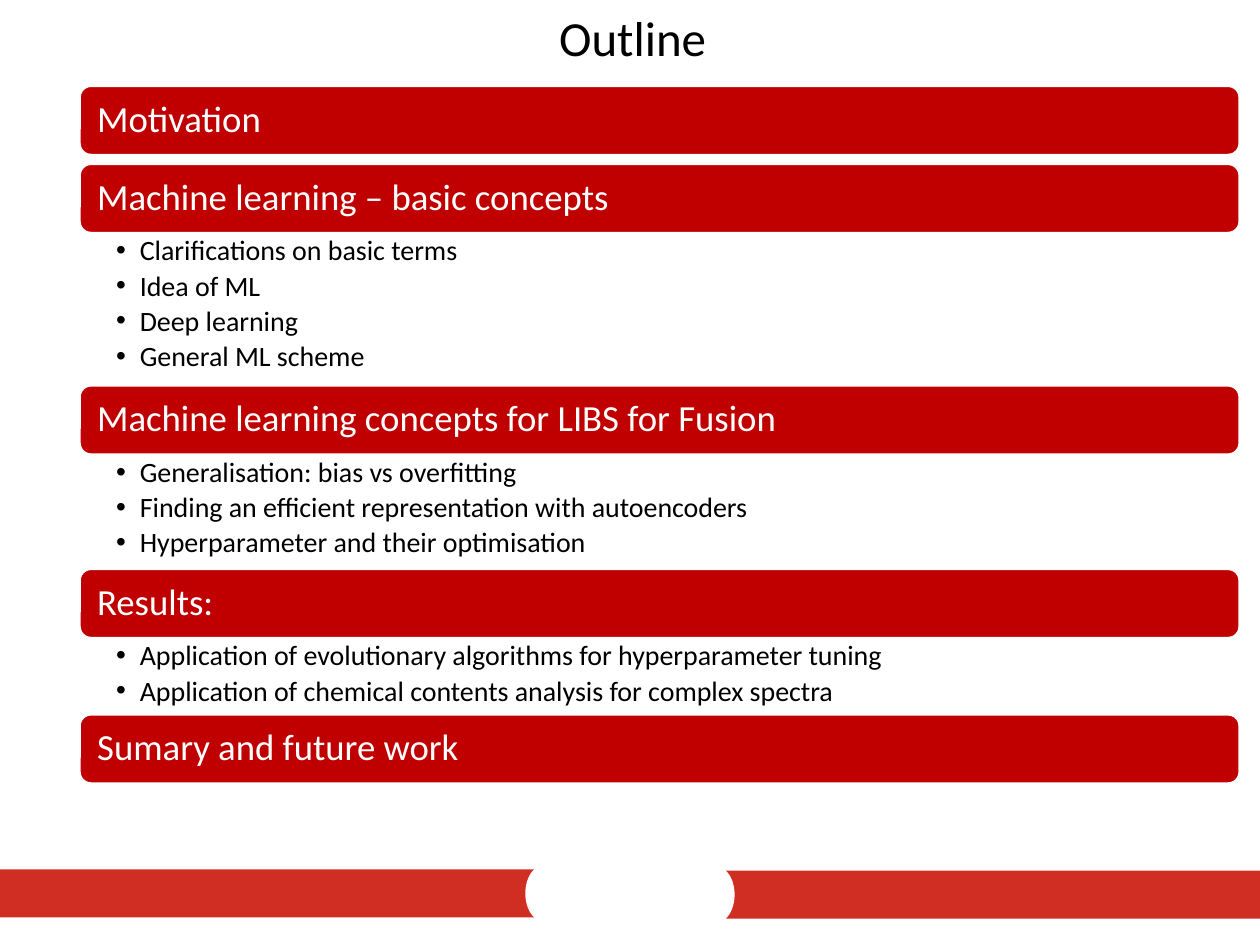
from lxml import etree
from pptx import Presentation
from pptx import util as u
from pptx.dml.color import RGBColor
from pptx.enum import shapes, text
from pptx.oxml.ns import qn

Pt = u.Pt
TITLE = "Outline"
PARTS = [
    ("Motivation", []),
    ("Machine learning – basic concepts", [
        "Clarifications on basic terms",
        "Idea of ML",
        "Deep learning",
        "General ML scheme",
    ]),
    ("Machine learning concepts for LIBS for Fusion", [
        "Generalisation: bias vs overfitting",
        "Finding an efficient representation with autoencoders",
        "Hyperparameter and their optimisation",
    ]),
    ("Results:", [
        "Application of evolutionary algorithms for hyperparameter tuning",
        "Application of chemical contents analysis for complex spectra",
    ]),
    ("Sumary and future work", []),
]


class Theme:
    font = "Calibri"
    black, white = RGBColor(0, 0, 0), RGBColor(255, 255, 255)
    bar, band = RGBColor(0xC0, 0, 0), RGBColor(0xD0, 0x2E, 0x23)
    title, head, item = Pt(28), Pt(21), Pt(16)


WIDE, HIGH = 720, 540
LEFT, TOP, SPAN = 45.4, 49, 663
BAR, ROW, GAP = 39.6, 21.75, 5
MID, ANY = text.MSO_ANCHOR.MIDDLE, text.MSO_ANCHOR.TOP
BAND_W, BAND_H, CAP_W, CAP_H = 305.3, 27.4, 21.6, 32.4


def put(item, vals):
    for key, val in vals.items():
        setattr(item, key, val)


def box(kind, area, fill, line=None):
    shape = page.shapes.add_shape(kind, *map(Pt, area))
    shape.shadow.inherit = False
    shape.fill.solid()
    shape.fill.fore_color.rgb = fill
    if line is None:
        shape.line.fill.background()
    else:
        shape.line.color.rgb = line
        shape.line.width = Pt(1.5)
    return shape


def frame(shape, pads, anchor):
    tf = shape.text_frame
    names = ("margin_left", "margin_top", "margin_right", "margin_bottom")
    put(tf, dict(zip(names, map(Pt, pads)), word_wrap=True, vertical_anchor=anchor))
    return tf


def write(para, words, size, color, align=text.PP_ALIGN.LEFT, after=0):
    put(para, {"alignment": align, "line_spacing": 0.9, "space_after": Pt(after)})
    run = para.add_run()
    run.text = words
    put(run.font, {"name": Theme.font, "size": size})
    run.font.color.rgb = color


def bullet(para):
    para.level = 1
    props = para._p.get_or_add_pPr()
    props.set("marL", str(Pt(13.5)))
    props.set("indent", str(-Pt(13.5)))
    etree.SubElement(props, qn("a:buFont")).set("typeface", "Arial")
    etree.SubElement(props, qn("a:buChar")).set("char", "•")


deck = Presentation()
put(deck, {"slide_width": Pt(WIDE), "slide_height": Pt(HIGH)})
page = deck.slides.add_slide(deck.slide_layouts[5])

for left, top, cap in ((0, 496.8, 300.2), (WIDE - BAND_W, 497.5, 398.2)):
    box(shapes.MSO_SHAPE.RECTANGLE, (left, top, BAND_W, BAND_H), Theme.band)
    lift = (CAP_H - BAND_H) / 2
    box(shapes.MSO_SHAPE.OVAL, (cap, top - lift, CAP_W, CAP_H), Theme.white)

title = page.shapes.title
put(title, {"left": Pt(121), "top": Pt(7.2), "width": Pt(481), "height": Pt(31.7)})
tf = frame(title, (7.2, 3.6, 7.2, 3.6), MID)
write(tf.paragraphs[0], TITLE, Theme.title, Theme.black, text.PP_ALIGN.CENTER)

y = TOP
for head, items in PARTS:
    bar = box(shapes.MSO_SHAPE.ROUNDED_RECTANGLE, (LEFT, y, SPAN, BAR),
              Theme.bar, Theme.white)
    tf = frame(bar, (8.2, 6.3, 8.2, 6.3), MID)
    write(tf.paragraphs[0], head, Theme.head, Theme.white)
    y += BAR
    if items:
        tall = ROW * len(items)
        area = page.shapes.add_textbox(*map(Pt, (LEFT, y, SPAN, tall)))
        tf = frame(area, (21, 2.1, 11.7, 2.1), ANY)
        for i, words in enumerate(items):
            para = tf.add_paragraph() if i else tf.paragraphs[0]
            bullet(para)
            write(para, words, Theme.item, Theme.black, after=2.8)
        y += tall
    else:
        y += GAP

deck.save("out.pptx")
